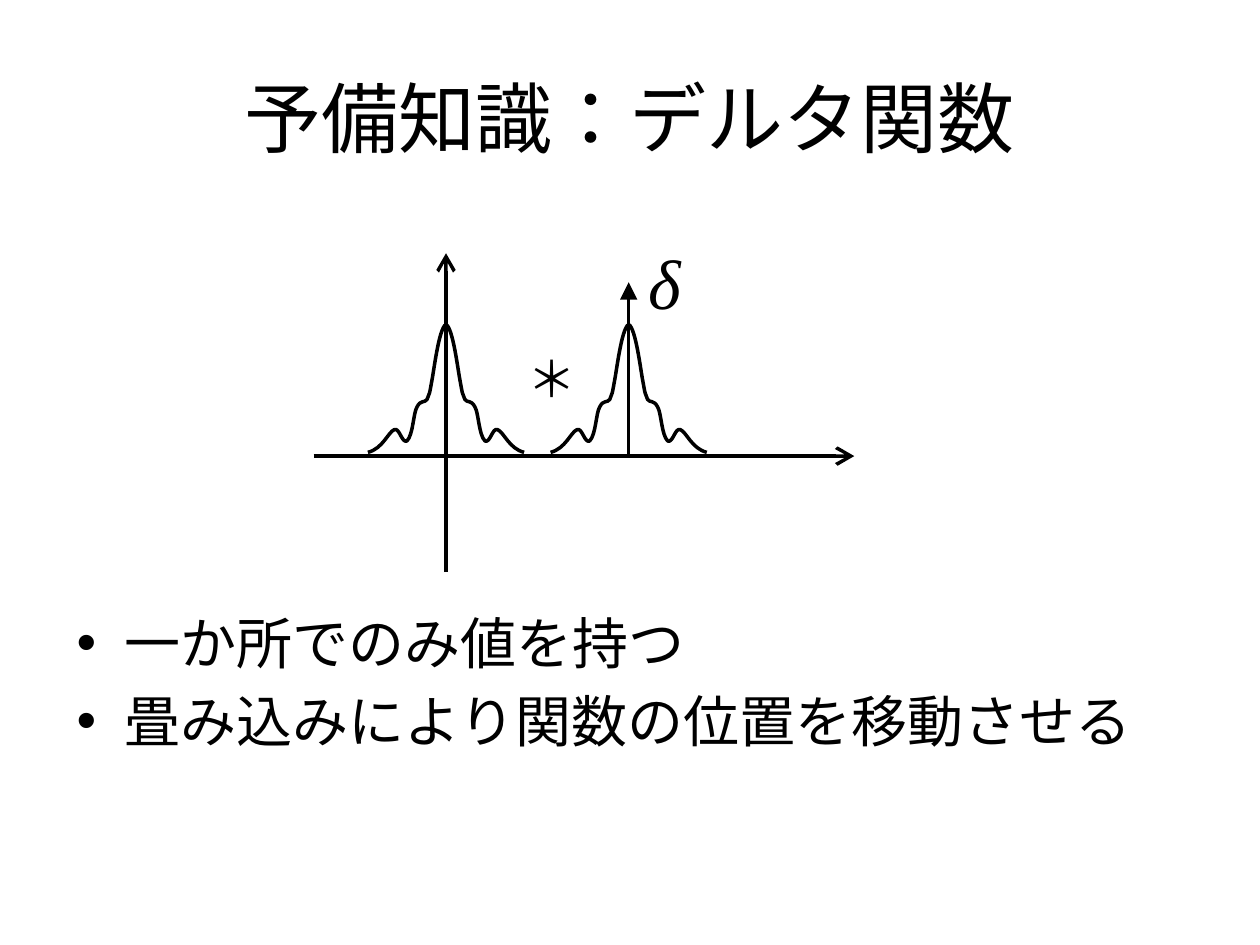
"""Build a slide on how convolution with a delta function moves a function."""
from dataclasses import dataclass

from lxml import etree
from pptx import Presentation
from pptx import util as u
from pptx.dml.color import RGBColor
from pptx.enum import lang, shapes, text
from pptx.oxml.ns import qn


@dataclass(frozen=True)
class Theme:
    ink: RGBColor = RGBColor(0, 0, 0)
    paper: RGBColor = RGBColor(255, 255, 255)
    sans: str = "Karla"
    serif: str = "Times New Roman"
    title_size: int = 44
    body_size: int = 32
    star_size: int = 28
    delta_size: int = 40
    line: float = 2
    thin_line: float = 1.5


ORIGIN_X, AXIS_Y, PEAK_Y = 3.54, 3.62, 2.57
DELTA_X = 4.99
OVERLAP = 0.01
HALF_PEAK = [
    (0, 0),
    (0.06, 0), (0.1, 0.33), (0.12, 0.44),
    (0.14, 0.55), (0.14, 0.56), (0.16, 0.6),
    (0.18, 0.63), (0.21, 0.6), (0.24, 0.66),
    (0.27, 0.71), (0.27, 0.88), (0.32, 0.93),
    (0.36, 0.95), (0.38, 0.82), (0.42, 0.84),
    (0.47, 0.86), (0.51, 0.99), (0.63, 1.02),
]


def bend(shape):
    """Turn every three straight segments of a freeform into one Bezier curve."""
    outline = next(shape._element.iter(qn("a:path")))
    segments = outline.findall(qn("a:lnTo"))
    for index in range(0, len(segments), 3):
        curve = etree.SubElement(outline, qn("a:cubicBezTo"))
        for segment in segments[index:index + 3]:
            curve.append(segment[0])
            outline.remove(segment)


def write(para, words, *, font, size, color, italic=False, align=None):
    """Add formatted words to a paragraph."""
    span = para.add_run()
    span.text = words
    span.font.name = font
    span.font.size = u.Pt(size)
    span.font.color.rgb = color
    span.font.language_id = lang.MSO_LANGUAGE_ID.JAPANESE
    if italic:
        span.font.italic = True
    if align is not None:
        para.alignment = align


class SlideBuilder:
    """Hold the theme and the current slide, and draw each kind of element."""

    def __init__(self, page, theme):
        self.page = page
        self.theme = theme
        page.background.fill.solid()
        page.background.fill.fore_color.rgb = theme.paper

    def title(self, words, left, top, width, height):
        box = self.page.shapes.title
        box.left, box.top = u.Inches(left), u.Inches(top)
        box.width, box.height = u.Inches(width), u.Inches(height)
        box.text_frame.vertical_anchor = text.MSO_ANCHOR.MIDDLE
        write(box.text_frame.paragraphs[0], words, font=self.theme.sans,
              size=self.theme.title_size, color=self.theme.ink,
              align=text.PP_ALIGN.CENTER)

    def text_frame(self, left, top, width, height):
        box = self.page.shapes.add_textbox(
            u.Inches(left), u.Inches(top), u.Inches(width), u.Inches(height))
        box.text_frame.word_wrap = True
        return box.text_frame

    def bullets(self, items, left, top, width, height):
        frame = self.text_frame(left, top, width, height)
        for index, item in enumerate(items):
            para = frame.add_paragraph() if index else frame.paragraphs[0]
            para.space_before = u.Pt(0.2 * self.theme.body_size)
            props = para._p.get_or_add_pPr()
            props.set("marL", str(u.Inches(0.38)))
            props.set("indent", str(-u.Inches(0.38)))
            etree.SubElement(props, qn("a:buFont"), typeface="Arial")
            etree.SubElement(props, qn("a:buChar"), char="•")
            write(para, item, font=self.theme.sans,
                  size=self.theme.body_size, color=self.theme.ink)

    def symbol(self, sign, left, top, width, height, size, italic=False):
        frame = self.text_frame(left, top, width, height)
        frame.auto_size = text.MSO_AUTO_SIZE.SHAPE_TO_FIT_TEXT
        write(frame.paragraphs[0], sign, font=self.theme.serif, size=size,
              color=self.theme.ink, italic=italic)

    def arrow(self, start, end, weight, head):
        line = self.page.shapes.add_connector(
            shapes.MSO_CONNECTOR.STRAIGHT, *map(u.Inches, (*start, *end)))
        line.line.color.rgb = self.theme.ink
        line.line.width = u.Pt(weight)
        etree.SubElement(line.line._get_or_add_ln(), qn("a:tailEnd"),
                         type=head, w="lg", len="lg")
        etree.SubElement(line._element.spPr, qn("a:effectLst"))

    def peak(self, center):
        group = self.page.shapes.add_group_shape()
        for side in (1, -1):
            points = [(u.Inches(center + side * (x - OVERLAP)), u.Inches(PEAK_Y + y))
                      for x, y in HALF_PEAK]
            builder = group.shapes.build_freeform(*points[0])
            builder.add_line_segments(points[1:], close=False)
            half = builder.convert_to_shape()
            bend(half)
            half.shadow.inherit = False
            half.fill.background()
            half.line.color.rgb = self.theme.ink
            half.line.width = u.Pt(self.theme.line)


def main():
    theme = Theme()
    deck = Presentation()
    deck.slide_width, deck.slide_height = u.Inches(10), u.Inches(7.5)
    slide = SlideBuilder(deck.slides.add_slide(deck.slide_layouts[5]), theme)

    slide.title("予備知識：デルタ関数", 0.5, 0.3, 9, 1.25)
    slide.bullets(["一か所でのみ値を持つ", "畳み込みにより関数の位置を移動させる"],
                  0.51, 4.78, 8.99, 1.92)
    slide.arrow((DELTA_X, AXIS_Y), (DELTA_X, 2.24), theme.thin_line, "triangle")
    slide.arrow((2.49, AXIS_Y), (6.78, AXIS_Y), theme.line, "arrow")
    slide.arrow((ORIGIN_X, 4.54), (ORIGIN_X, 2.01), theme.line, "arrow")
    for center in (ORIGIN_X, DELTA_X):
        slide.peak(center)
    slide.symbol("＊", 4.09, 2.72, 0.72, 0.57, theme.star_size)
    slide.symbol("δ", 5.05, 1.85, 0.72, 0.77, theme.delta_size, italic=True)
    deck.save("out.pptx")


if __name__ == "__main__":
    main()
